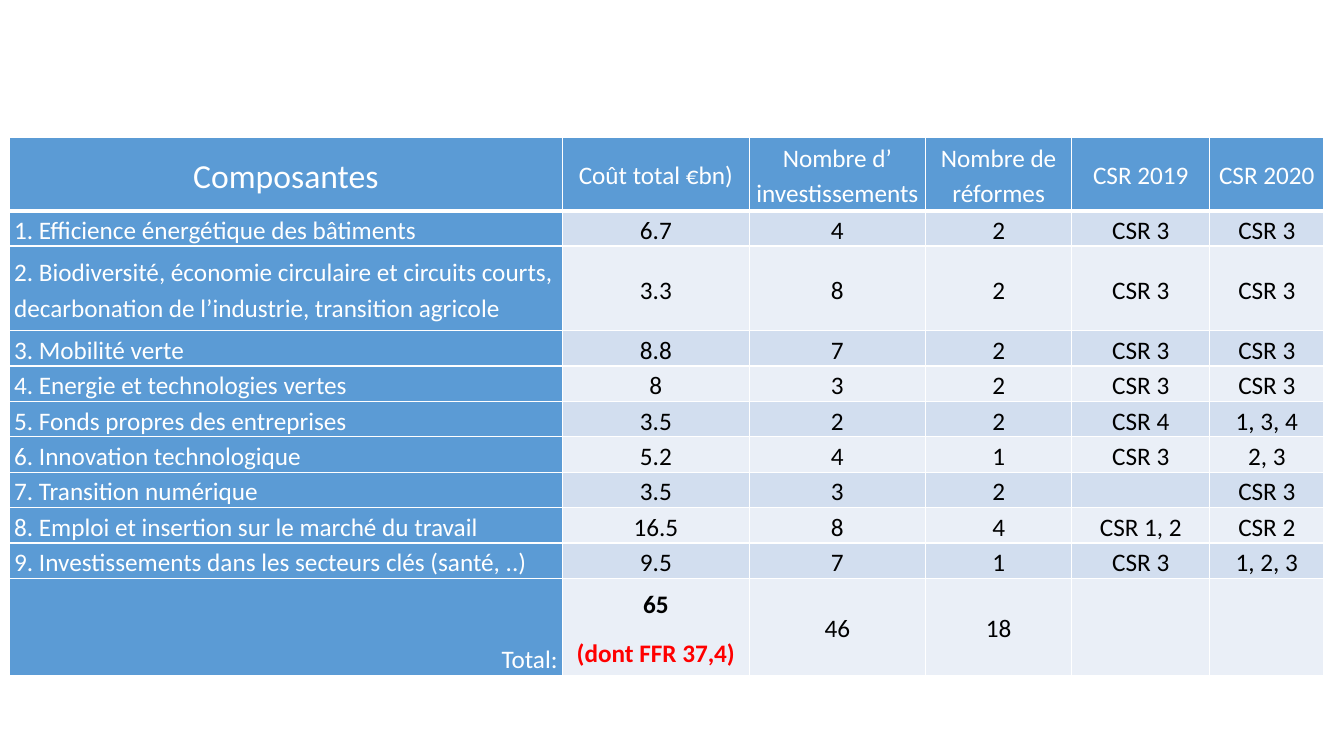
"""Build a slide with the table of plan components, their costs and recommendations."""
from dataclasses import dataclass

from lxml.etree import SubElement
from pptx import Presentation
from pptx.dml.color import RGBColor as Rgb
from pptx.enum.text import MSO_ANCHOR as Anchor, PP_ALIGN as Align
from pptx.oxml.ns import qn
from pptx.util import Inches, Pt


@dataclass(frozen=True)
class Theme:
    font: str = "Calibri"
    body: int = 18
    heading: int = 24
    white: str = "FFFFFF"
    black: str = "000000"
    red: str = "FF0000"
    blue: str = "5B9BD5"
    bands: tuple = ("EAEFF7", "D2DEEF")


HEADINGS = ("Composantes", "Coût total €bn)", "Nombre d’ investissements",
            "Nombre de réformes", "CSR 2019", "CSR 2020")
COMPONENTS = (
    ("1. Efficience énergétique des bâtiments", "6.7", "4", "2", "CSR 3", "CSR 3"),
    ("2. Biodiversité, économie circulaire et circuits courts, "
     "decarbonation de l’industrie, transition agricole",
     "3.3", "8", "2", "CSR 3", "CSR 3"),
    ("3. Mobilité verte", "8.8", "7", "2", "CSR 3", "CSR 3"),
    ("4. Energie et technologies vertes", "8", "3", "2", "CSR 3", "CSR 3"),
    ("5. Fonds propres des entreprises", "3.5", "2", "2", "CSR 4", "1, 3, 4"),
    ("6. Innovation technologique", "5.2", "4", "1", "CSR 3", "2, 3"),
    ("7. Transition numérique", "3.5", "3", "2", "", "CSR 3"),
    ("8. Emploi et insertion sur le marché du travail",
     "16.5", "8", "4", "CSR 1, 2", "CSR 2"),
    ("9. Investissements dans les secteurs clés (santé, ..)",
     "9.5", "7", "1", "CSR 3", "1, 2, 3"),
)
TOTALS = ("Total:", "65\n(dont FFR 37,4)", "46", "18", "", "")
COLUMN_WIDTHS = (5.49, 1.85, 1.75, 1.45, 1.37, 1.13)
ROW_HEIGHTS = (0.73, 0.34, 0.84, *[0.34] * 7, 0.96)


class SlideBuilder:
    """Hold the theme and the current slide, and add elements to it."""

    def __init__(self, slide, theme):
        self.slide = slide
        self.theme = theme

    def table(self, left, top, widths, heights):
        """Add an empty table with the given column widths and row heights."""
        frame = self.slide.shapes.add_table(
            len(heights), len(widths), Inches(left), Inches(top),
            Inches(sum(widths)), Inches(sum(heights)))
        for column, width in zip(frame.table.columns, widths):
            column.width = Inches(width)
        for row, height in zip(frame.table.rows, heights):
            row.height = Inches(height)
        return frame.table

    def borders(self, cell, top=1, bottom=1):
        """Draw white lines around a cell."""
        properties = cell._tc.get_or_add_tcPr()
        for side, width in (("L", 1), ("R", 1), ("T", top), ("B", bottom)):
            line = SubElement(properties, qn(f"a:ln{side}"), w=str(Pt(width)))
            fill = SubElement(line, qn("a:solidFill"))
            SubElement(fill, qn("a:srgbClr"), val=self.theme.white)

    def cell(self, cell, text, fill, color, size=None, align=Align.CENTER,
             anchor=Anchor.MIDDLE):
        """Fill a cell and set its text, one paragraph for each line."""
        cell.fill.solid()
        cell.fill.fore_color.rgb = Rgb.from_string(fill)
        cell.margin_left = cell.margin_right = Inches(0.05)
        cell.margin_top = cell.margin_bottom = 0
        cell.vertical_anchor = anchor
        cell.text_frame.text = text
        for paragraph in cell.text_frame.paragraphs:
            paragraph.alignment = align
            paragraph.line_spacing = 1.15
            paragraph.space_after = Pt(10)
            font = paragraph.font
            font.name = self.theme.font
            font.size = Pt(size or self.theme.body)
            font.bold = False
            font.color.rgb = Rgb.from_string(color)

    def components_table(self):
        """Add the table of components with its heading and total rows."""
        theme = self.theme
        table = self.table(0.09, 1.36, COLUMN_WIDTHS, ROW_HEIGHTS)
        rows = (HEADINGS, *COMPONENTS, TOTALS)
        total_row = len(rows) - 1
        for r, texts in enumerate(rows):
            for c, text in enumerate(texts):
                cell = table.cell(r, c)
                self.borders(cell, top=3 if r == 1 else 1, bottom=3 if r == 0 else 1)
                if r == 0:
                    self.cell(cell, text, theme.blue, theme.white,
                              size=theme.body if c else theme.heading)
                elif c == 0:
                    is_total = r == total_row
                    self.cell(cell, text, theme.blue, theme.white,
                              align=Align.RIGHT if is_total else Align.LEFT,
                              anchor=Anchor.BOTTOM if is_total else Anchor.MIDDLE)
                else:
                    self.cell(cell, text, theme.bands[r % 2], theme.black)
        total_cost, funded_share = table.cell(total_row, 1).text_frame.paragraphs
        total_cost.font.bold = funded_share.font.bold = True
        funded_share.font.color.rgb = Rgb.from_string(theme.red)


def main():
    deck = Presentation()
    deck.slide_width, deck.slide_height = Inches(13.33), Inches(7.5)
    slide = deck.slides.add_slide(deck.slide_layouts[6])
    SlideBuilder(slide, Theme()).components_table()
    deck.save("out.pptx")


if __name__ == "__main__":
    main()
